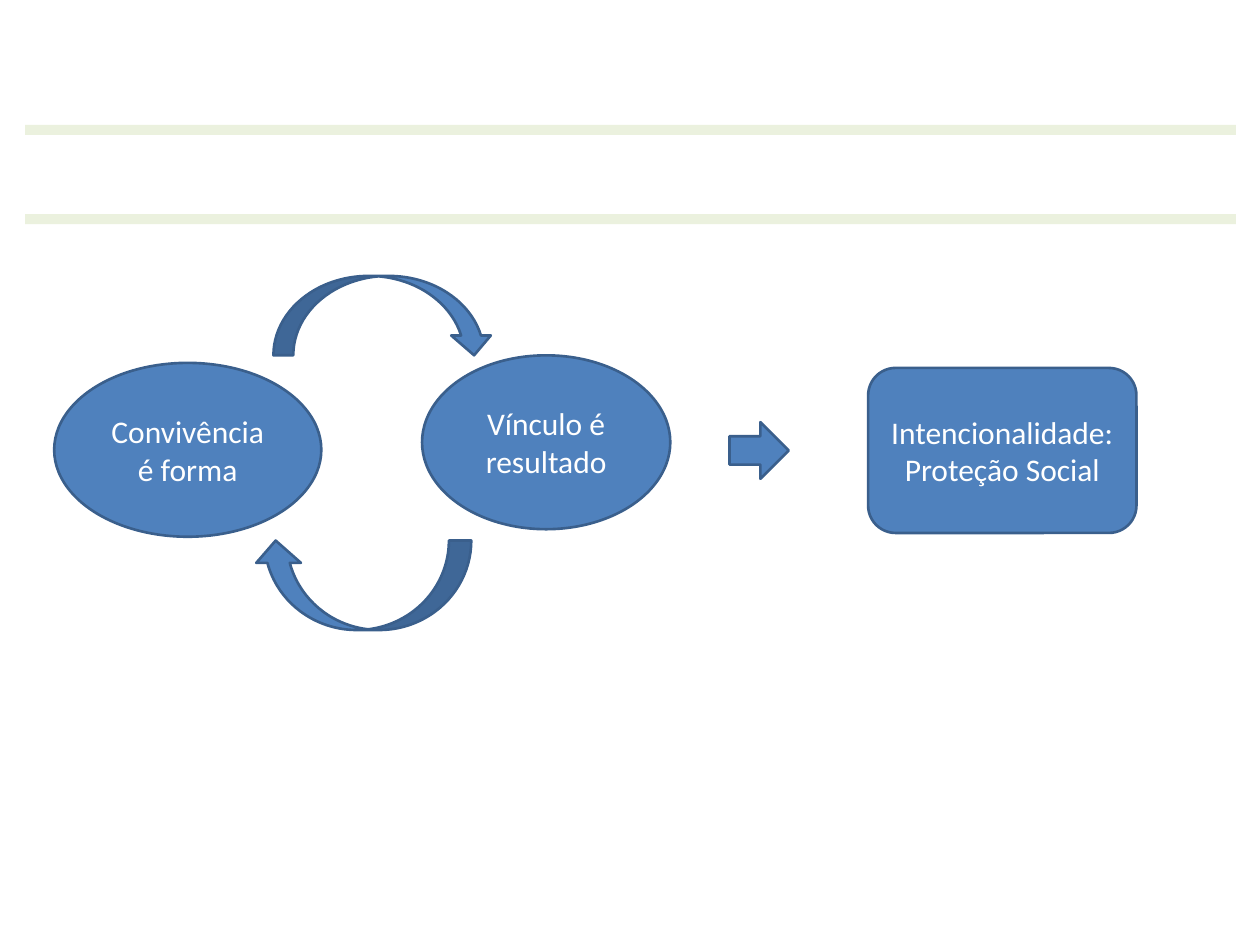
import pptx
import pptx.util
import pptx.dml.color
import pptx.enum.shapes
import pptx.enum.text

Inches = pptx.util.Inches
Kind = pptx.enum.shapes.MSO_SHAPE
RGBColor = pptx.dml.color.RGBColor

BLUE = RGBColor(0x4F, 0x81, 0xBD)
DARK_BLUE = RGBColor(0x3A, 0x5F, 0x8C)
PALE_GREEN = RGBColor(0xEB, 0xF1, 0xDE)
WHITE = RGBColor(0xFF, 0xFF, 0xFF)


def add_filled(page, kind, left, top, width, height, fill):
    box = page.shapes.add_shape(
        kind, Inches(left), Inches(top), Inches(width), Inches(height)
    )
    box.shadow.inherit = False
    box.fill.solid()
    box.fill.fore_color.rgb = fill
    return box


def add_band(page, top):
    band = add_filled(page, Kind.RECTANGLE, 0.2, top, 9.61, 0.08, PALE_GREEN)
    band.line.fill.background()


def add_outlined(page, kind, left, top, width, height, rotation=0):
    box = add_filled(page, kind, left, top, width, height, BLUE)
    box.line.color.rgb = DARK_BLUE
    box.line.width = pptx.util.Pt(1.5)
    box.rotation = rotation
    return box


def add_concept(page, kind, left, top, width, height, lines):
    frame = add_outlined(page, kind, left, top, width, height).text_frame
    frame.word_wrap = True
    frame.vertical_anchor = pptx.enum.text.MSO_ANCHOR.MIDDLE
    for index, line in enumerate(lines):
        para = frame.add_paragraph() if index else frame.paragraphs[0]
        para.alignment = pptx.enum.text.PP_ALIGN.CENTER
        span = para.add_run()
        span.text = line
        span.font.name = "Calibri"
        span.font.size = pptx.util.Pt(18)
        span.font.color.rgb = WHITE


def main():
    deck = pptx.Presentation()
    deck.slide_width = Inches(10)
    deck.slide_height = Inches(7.5)
    page = deck.slides.add_slide(deck.slide_layouts.get_by_name("Blank"))

    for top in (0.99, 1.7):
        add_band(page, top)

    add_outlined(page, Kind.CURVED_DOWN_ARROW, 2.17, 2.19, 1.75, 0.63)
    add_concept(page, Kind.OVAL, 0.43, 2.88, 2.12, 1.38, ["Convivência é forma"])
    add_concept(page, Kind.OVAL, 3.35, 2.82, 1.97, 1.38, ["Vínculo é resultado"])
    add_outlined(page, Kind.CURVED_LEFT_ARROW, 2.52, 3.78, 0.71, 1.73, 90)
    add_outlined(page, Kind.RIGHT_ARROW, 5.79, 3.35, 0.47, 0.45)
    add_concept(
        page, Kind.FLOWCHART_ALTERNATE_PROCESS, 6.89, 2.92, 2.13, 1.31,
        ["Intencionalidade:", "Proteção Social"],
    )

    deck.save("out.pptx")


if __name__ == "__main__":
    main()
